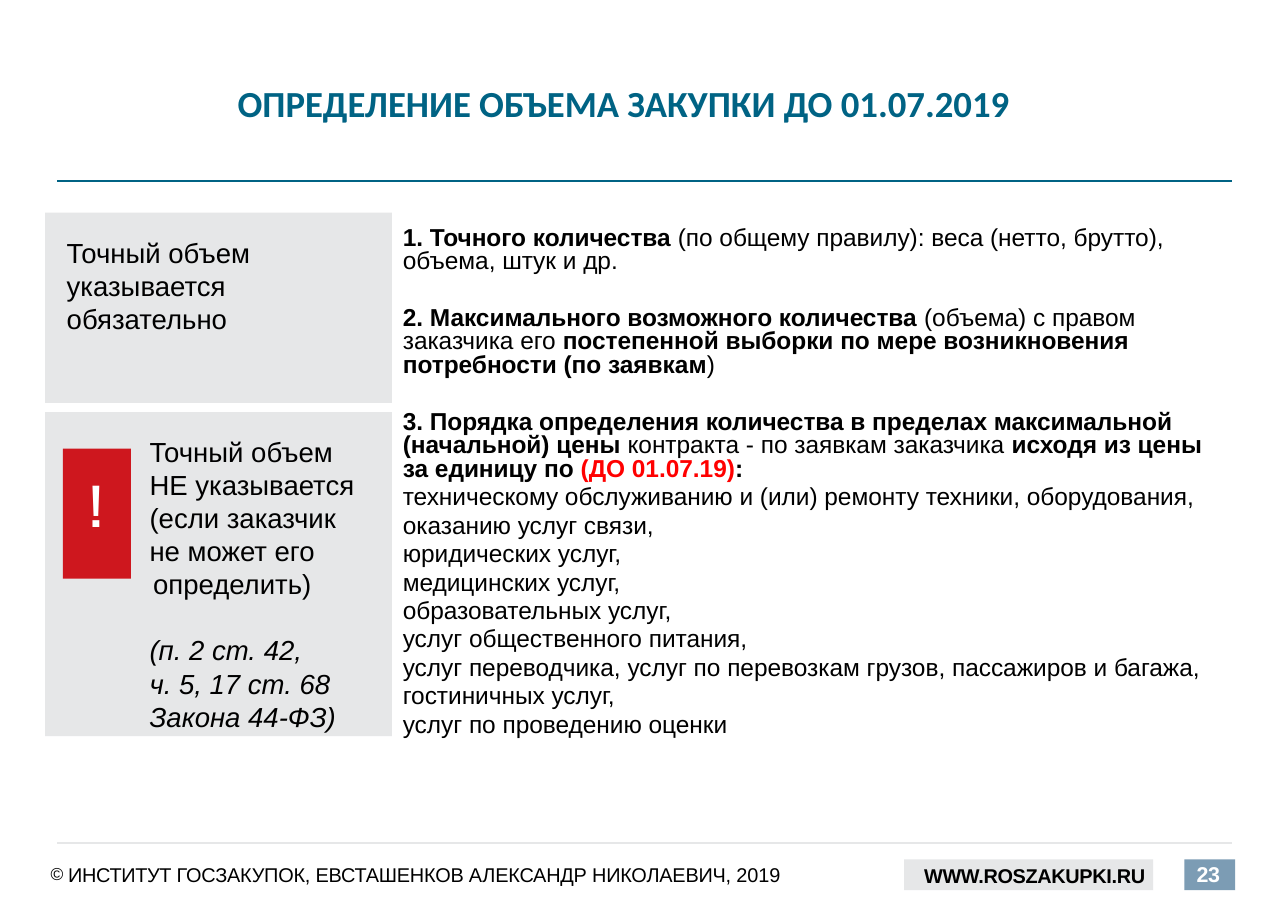
from dataclasses import dataclass, field
from typing import Any

from lxml.etree import SubElement
from pptx import Presentation
from pptx.dml.color import RGBColor
from pptx.enum.shapes import MSO_CONNECTOR, MSO_SHAPE
from pptx.enum.text import MSO_ANCHOR, PP_ALIGN
from pptx.oxml.ns import qn
from pptx.util import Cm, Pt

BLACK = RGBColor(0x00, 0x00, 0x00)
WHITE = RGBColor(0xFF, 0xFF, 0xFF)
RED = RGBColor(0xFF, 0x00, 0x00)
CRIMSON = RGBColor(0xCE, 0x17, 0x1E)
TEAL = RGBColor(0x00, 0x63, 0x84)
STEEL = RGBColor(0x7C, 0x9C, 0xB4)
GREY = RGBColor(0xE6, 0xE7, 0xE8)


@dataclass
class Span:
    text: str
    font: dict[str, Any] = field(default_factory=dict)
    color: RGBColor | None = None
    extra: dict[str, str] = field(default_factory=dict)


@dataclass
class Para:
    spans: list[Span]
    format: dict[str, Any] = field(default_factory=dict)


@dataclass
class Box:
    place: tuple[float, float, float, float]
    paras: list[Para] = field(default_factory=list)
    font: dict[str, Any] = field(default_factory=dict)
    color: RGBColor = BLACK
    fill: RGBColor | None = None
    insets: tuple[float, float, float, float] = (0, 0, 0, 0)
    anchor: MSO_ANCHOR = MSO_ANCHOR.TOP
    indent: tuple[float, float] = (0, 0)


@dataclass
class Rule:
    top: float
    color: RGBColor
    width: float


def set_all(target: Any, values: dict[str, Any]) -> None:
    for name, value in values.items():
        setattr(target, name, value)


def arial(size: float, **more: Any) -> dict[str, Any]:
    return {"name": "Arial", "size": Pt(size), **more}


def plain(text: str, **format: Any) -> Para:
    return Para([Span(text)], format)


def bold(text: str, color: RGBColor | None = None) -> Span:
    return Span(text, {"bold": True}, color)


def draw_rule(page: Any, rule: Rule) -> None:
    line = page.shapes.add_connector(
        MSO_CONNECTOR.STRAIGHT, Cm(1.32), Cm(rule.top), Cm(28.42), Cm(rule.top))
    line.line.color.rgb = rule.color
    line.line.width = Pt(rule.width)
    SubElement(line._element.spPr, qn("a:effectLst"))


def draw_box(page: Any, box: Box) -> None:
    place = [Cm(length) for length in box.place]
    if box.fill is None:
        shape = page.shapes.add_textbox(*place)
    else:
        shape = page.shapes.add_shape(MSO_SHAPE.RECTANGLE, *place)
        shape.shadow.inherit = False
        shape.fill.solid()
        shape.fill.fore_color.rgb = box.fill
        shape.line.fill.background()
    frame = shape.text_frame
    left, top, right, bottom = (Cm(inset) for inset in box.insets)
    set_all(frame, {
        "word_wrap": True, "vertical_anchor": box.anchor,
        "margin_left": left, "margin_top": top,
        "margin_right": right, "margin_bottom": bottom})
    for index, item in enumerate(box.paras):
        para = frame.paragraphs[0] if index == 0 else frame.add_paragraph()
        set_all(para, {"alignment": PP_ALIGN.LEFT, **item.format})
        properties = para._p.get_or_add_pPr()
        for name, length in zip(("marL", "indent"), box.indent):
            properties.set(name, str(Cm(length)))
        for piece in item.spans:
            span = para.add_run()
            span.text = piece.text
            set_all(span.font, {**box.font, **piece.font})
            span.font.color.rgb = piece.color or box.color
            for name, value in piece.extra.items():
                span._r.get_or_add_rPr().set(name, value)


TIGHT = {"line_spacing": 0.8}
NEXT = {**TIGHT, "space_before": Pt(3.2)}
SECTION = {**TIGHT, "space_before": Pt(21.8)}
SERVICES = [
    "техническому обслуживанию и (или) ремонту техники, оборудования,",
    "оказанию услуг связи,",
    "юридических услуг,",
    "медицинских услуг,",
    "образовательных услуг,",
    "услуг общественного питания,",
    "услуг переводчика, услуг по перевозкам грузов, пассажиров и багажа,",
    "гостиничных услуг,",
    "услуг по проведению оценки",
]
METHODS = [
    Para([bold("1. Точного количества "),
          Span("(по общему правилу): веса (нетто, брутто), объема, штук и др.")], TIGHT),
    Para([bold("2. Максимального возможного количества "),
          Span("(объема) с правом заказчика его "),
          bold("постепенной выборки по мере возникновения потребности (по заявкам"),
          Span(")")], SECTION),
    Para([bold("3. Порядка определения количества в пределах максимальной (начальной) цены"),
          Span(" контракта - по заявкам заказчика "),
          bold("исходя из цены за единицу по "),
          bold("(ДО 01.07.19)", RED), bold(":")], SECTION),
    *(plain(service, **NEXT) for service in SERVICES),
]
EXACT = [plain(line) for line in ("Точный объем", "указывается", "обязательно")]
LAW = ["(п. 2 ст. 42,", "ч. 5, 17 ст. 68", "Закона 44-ФЗ)"]
INEXACT = [
    *(plain(line) for line in (
        "Точный объем", "НЕ указывается", "(если заказчик", "не может его определить)")),
    *(Para([Span(line, {"italic": True})], {"space_before": Pt(0 if index else 21.6)})
      for index, line in enumerate(LAW)),
]
CONDENSED = {"spc": "-20"}
COPYRIGHT = Para([
    Span("© ", {"size": Pt(19.5)}, extra={"baseline": "4000"}),
    Span("ИНСТИТУТ ", extra=CONDENSED),
    Span("ГОСЗАКУПОК, ЕВСТАШЕНКОВ АЛЕКСАНДР НИКОЛАЕВИЧ, ", extra={"spc": "-10"}),
    Span("2019"),
], {"line_spacing": Pt(14.8)})
CENTER = {"alignment": PP_ALIGN.CENTER}
FOOTER = {"insets": (0, 0.25, 0, 0.25), "anchor": MSO_ANCHOR.MIDDLE}
PANEL = {"font": arial(18), "fill": GREY, "insets": (0, 0.53, 0, 0)}

RULES = [Rule(19.43, GREY, 0.85), Rule(4.17, TEAL, 1.42)]
BOXES = [
    Box((20.85, 19.81, 5.74, 0.71), fill=GREY),
    Box((27.31, 19.81, 1.17, 0.71), fill=STEEL),
    Box((20.55, 19.66, 6.81, 1.04), [Para([Span("WWW.ROSZAKUPKI.RU", extra=CONDENSED)])],
        arial(13, bold=True), indent=(0.76, 0), **FOOTER),
    Box((27.23, 19.61, 1.27, 1.09), [Para([Span("23", extra=CONDENSED)], CENTER)],
        arial(14, bold=True), WHITE, **FOOTER),
    Box((1.14, 19.69, 17.35, 1.04), [COPYRIGHT], arial(13), indent=(0.03, 0), **FOOTER),
    Box((9.04, 5.11, 19.61, 15.19), METHODS, arial(16), insets=(0.25, 0.13, 0.25, 0.13)),
    Box((1.04, 4.9, 8, 4.39), EXACT, indent=(0.3, 0.2), **PANEL),
    Box((1.04, 9.5, 8, 7.47), INEXACT, indent=(2.49, -0.08), **PANEL),
    Box((1.45, 10.34, 1.57, 3), [plain("!", **CENTER)],
        {"name": "Cabin", "size": Pt(36), "bold": True}, WHITE, CRIMSON, (0, 0.56, 0, 0)),
    Box((5.48, 1.85, 23, 1.02), [plain("ОПРЕДЕЛЕНИЕ ОБЪЕМА ЗАКУПКИ ДО 01.07.2019")],
        {"name": "Calibri", "size": Pt(24), "bold": True}, TEAL, anchor=MSO_ANCHOR.MIDDLE),
]


def main() -> None:
    deck = Presentation()
    deck.slide_width, deck.slide_height = Cm(29.7), Cm(21)
    page = deck.slides.add_slide(deck.slide_layouts[6])
    for rule in RULES:
        draw_rule(page, rule)
    for box in BOXES:
        draw_box(page, box)
    deck.save("out.pptx")


if __name__ == "__main__":
    main()
